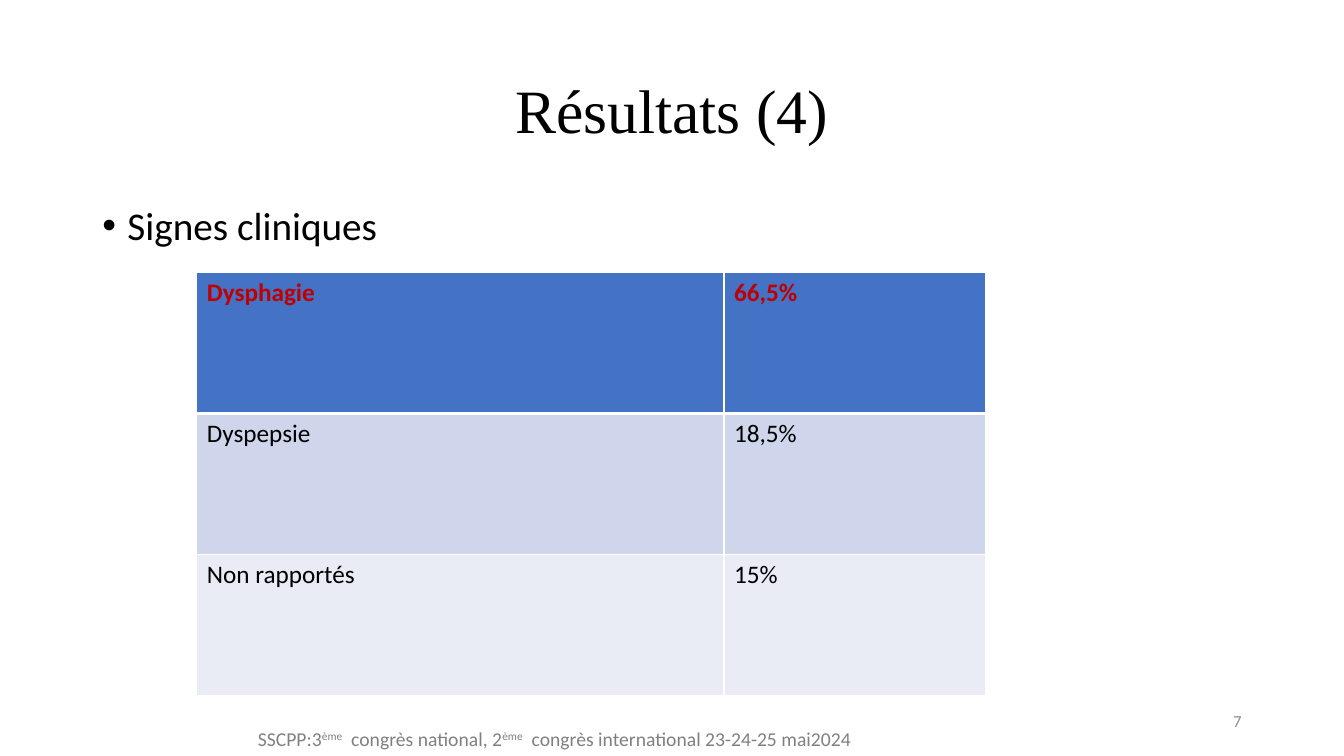
from lxml import etree
from pptx import Presentation
from pptx.dml.color import RGBColor
from pptx.enum import text
from pptx.oxml.ns import qn
from pptx.util import Pt


def write(para, content, size=18, color="000000", font="Calibri", bold=False, raised=False):
    """Append a formatted run to a paragraph."""
    span = para.add_run()
    span.text = content
    span.font.size, span.font.name, span.font.bold = Pt(size), font, bold
    span.font.color.rgb = RGBColor.from_string(color)
    if raised:
        span._r.get_or_add_rPr().set("baseline", "30000")


def add_box(left, top, width, height, anchor=text.MSO_ANCHOR.TOP, align=text.PP_ALIGN.LEFT):
    """Add a wrapping text box and return its first paragraph."""
    frame = page.shapes.add_textbox(Pt(left), Pt(top), Pt(width), Pt(height)).text_frame
    frame.word_wrap = True
    frame.vertical_anchor = anchor
    frame.paragraphs[0].alignment = align
    return frame.paragraphs[0]


deck = Presentation()
deck.slide_width, deck.slide_height = Pt(960), Pt(540)
page = deck.slides.add_slide(deck.slide_layouts[6])

title = add_box(66, 28.8, 828, 104.4, text.MSO_ANCHOR.MIDDLE, text.PP_ALIGN.CENTER)
title.line_spacing = 0.9
write(title, "Résultats (4)", size=44, font="Times New Roman")

bullet = add_box(66, 144, 828, 342.7)
bullet.line_spacing = 0.9
props = bullet._p.get_or_add_pPr()
props.set("marL", str(Pt(18)))
props.set("indent", str(Pt(-18)))
etree.SubElement(props, qn("a:buFont"), typeface="Arial")
etree.SubElement(props, qn("a:buChar"), char="•")
write(bullet, "Signes cliniques", size=28)

signs = [
    ("Dysphagie", "66,5%", "4472C4"),
    ("Dyspepsie", "18,5%", "CFD5EA"),
    ("Non rapportés", "15%", "E9EBF5"),
]
widths = [376.6, 186.8]
row_height = 100.8
table = page.shapes.add_table(
    len(signs), len(widths), Pt(140.6), Pt(194.6), Pt(sum(widths)), Pt(row_height * len(signs))
).table
for column, width in zip(table.columns, widths):
    column.width = Pt(width)

for i, (*labels, fill) in enumerate(signs):
    table.rows[i].height = Pt(row_height)
    header = i == 0
    for j, label in enumerate(labels):
        cell = table.cell(i, j)
        write(cell.text_frame.paragraphs[0], label,
              color="C00000" if header else "000000", bold=header)
        borders = cell._tc.get_or_add_tcPr()
        for side in "LRTB":
            thick = (i, side) in [(0, "B"), (1, "T")]
            line = etree.SubElement(borders, qn(f"a:ln{side}"), w=str(Pt(3 if thick else 1)))
            solid = etree.SubElement(line, qn("a:solidFill"))
            etree.SubElement(solid, qn("a:srgbClr"), val="FFFFFF")
        cell.fill.solid()
        cell.fill.fore_color.rgb = RGBColor.from_string(fill)

footer = add_box(177.1, 515.5, 645.8, 24.5)
for content, raised in [
    ("SSCPP:3", False),
    ("ème", True),
    ("  congrès national, 2", False),
    ("ème", True),
    ("  congrès international 23-24-25 mai2024", False),
]:
    write(footer, content, size=14, color="808080", raised=raised)

number = add_box(678, 500.5, 216, 28.8, text.MSO_ANCHOR.MIDDLE, text.PP_ALIGN.RIGHT)
write(number, "7", size=12, color="8C8C8C")

deck.save("out.pptx")
